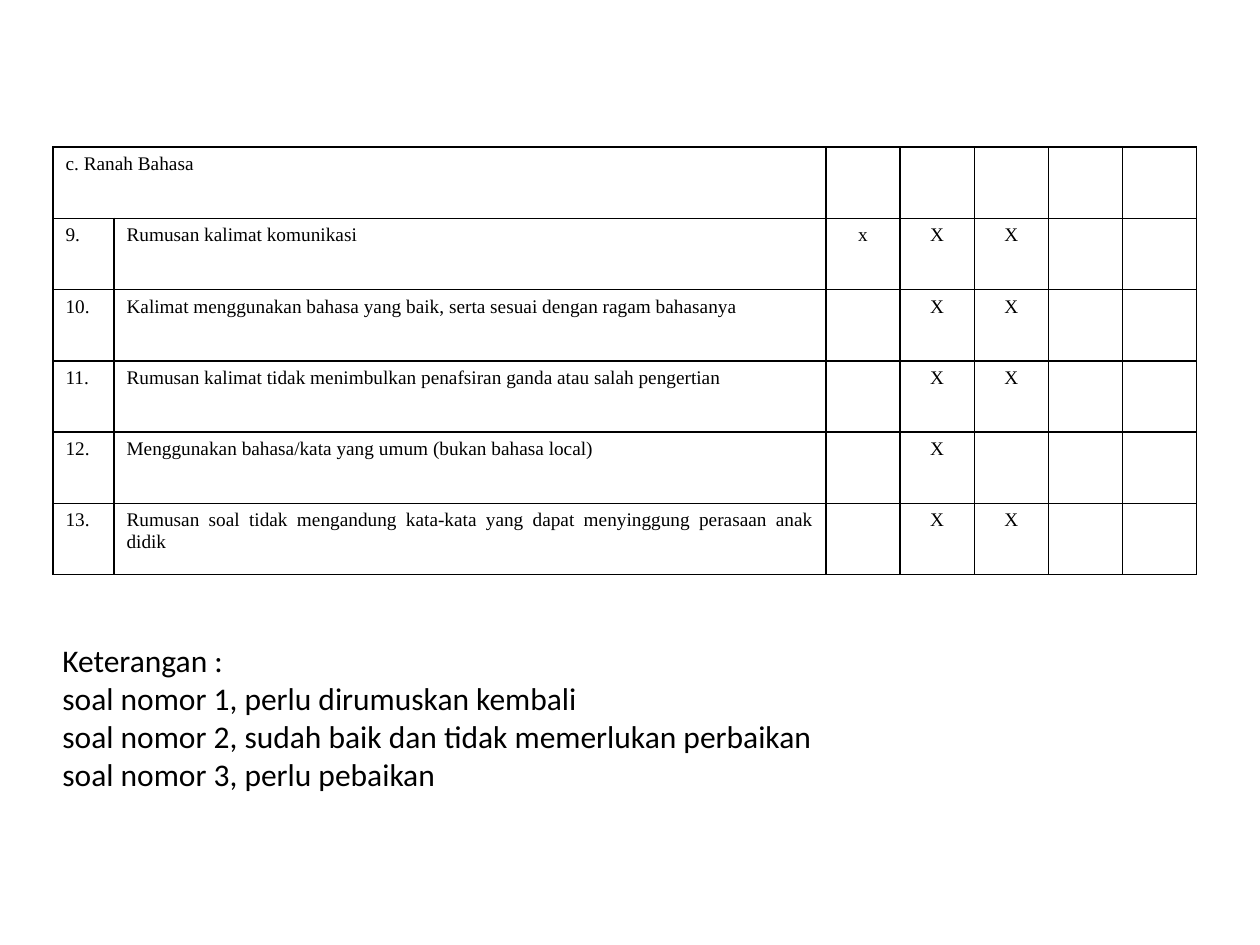
import pptx
import pptx.util
import pptx.dml.color
import pptx.enum.text
import pptx.oxml
import pptx.oxml.ns

COLORS = {"text": "000000", "line": "000000"}
HEAD = "c. Ranah Bahasa"
ROWS = [
    ("9.", "Rumusan kalimat komunikasi", "x", "X", "X"),
    ("10.", "Kalimat menggunakan bahasa yang baik, serta sesuai dengan ragam bahasanya", "", "X", "X"),
    ("11.", "Rumusan kalimat tidak menimbulkan penafsiran ganda atau salah pengertian", "", "X", "X"),
    ("12.", "Menggunakan bahasa/kata yang umum (bukan bahasa local)", "", "X", ""),
    ("13.", "Rumusan soal tidak mengandung kata-kata yang dapat menyinggung perasaan anak didik", "", "X", "X"),
]
NOTES = [
    "Keterangan :",
    "soal nomor 1, perlu dirumuskan kembali",
    "soal nomor 2, sudah baik dan tidak memerlukan perbaikan",
    "soal nomor 3, perlu pebaikan",
]
LEFT, TOP, HIGH = 53, 147, 428
NUM, ITEM, MARKS, COUNT = 61, 712, 371, 5
ALIGN = pptx.enum.text.PP_ALIGN


def px(num):
    return pptx.util.Emu(round(num * 914400 / 126))


def write(frame, lines, size, font, align=ALIGN.LEFT):
    for i, line in enumerate(lines):
        para = frame.paragraphs[0] if i == 0 else frame.add_paragraph()
        para.alignment = align
        run = para.add_run()
        run.text = line
        run.font.size = pptx.util.Pt(size)
        run.font.name = font
        run.font.color.rgb = pptx.dml.color.RGBColor.from_string(COLORS["text"])


def border(cell):
    props = cell._tc.get_or_add_tcPr()
    space = pptx.oxml.ns.nsdecls("a")
    for i, side in enumerate(("lnL", "lnR", "lnT", "lnB")):
        props.insert(i, pptx.oxml.parse_xml(
            f'<a:{side} {space} w="12700"><a:solidFill>'
            f'<a:srgbClr val="{COLORS["line"]}"/></a:solidFill></a:{side}>'))


def build_table(slide):
    wide = [NUM, ITEM] + [MARKS / COUNT] * COUNT
    count = len(ROWS) + 1
    table = slide.shapes.add_table(
        count, len(wide), px(LEFT), px(TOP), px(sum(wide)), px(HIGH)).table
    table.first_row = table.horz_banding = False
    for col, size in zip(table.columns, wide):
        col.width = px(size)
    for row in table.rows:
        row.height = px(HIGH / count)
    for cell in table.iter_cells():
        cell.fill.background()
        border(cell)
    table.cell(0, 0).merge(table.cell(0, 1))
    for r, row in enumerate([(HEAD,)] + ROWS):
        for c, text in enumerate(row):
            if text:
                align = ALIGN.JUSTIFY if c < 2 else ALIGN.CENTER
                write(table.cell(r, c).text_frame, [text], 11, "Times New Roman", align)


def main():
    deck = pptx.Presentation()
    deck.slide_width, deck.slide_height = px(1260), px(945)
    slide = deck.slides.add_slide(deck.slide_layouts[6])
    build_table(slide)
    box = slide.shapes.add_textbox(px(50), px(635), px(843), px(202))
    box.text_frame.word_wrap = True
    write(box.text_frame, NOTES, 18, "Calibri")
    deck.save("out.pptx")


if __name__ == "__main__":
    main()
